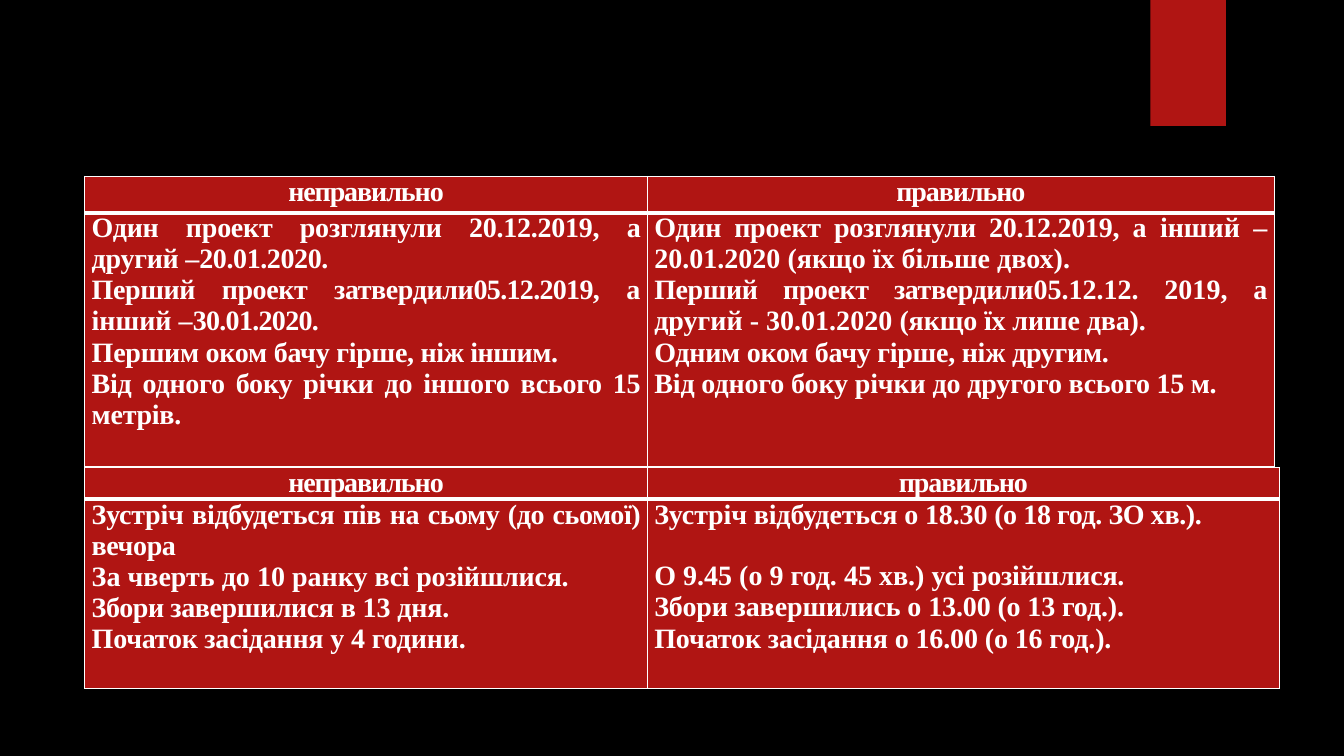
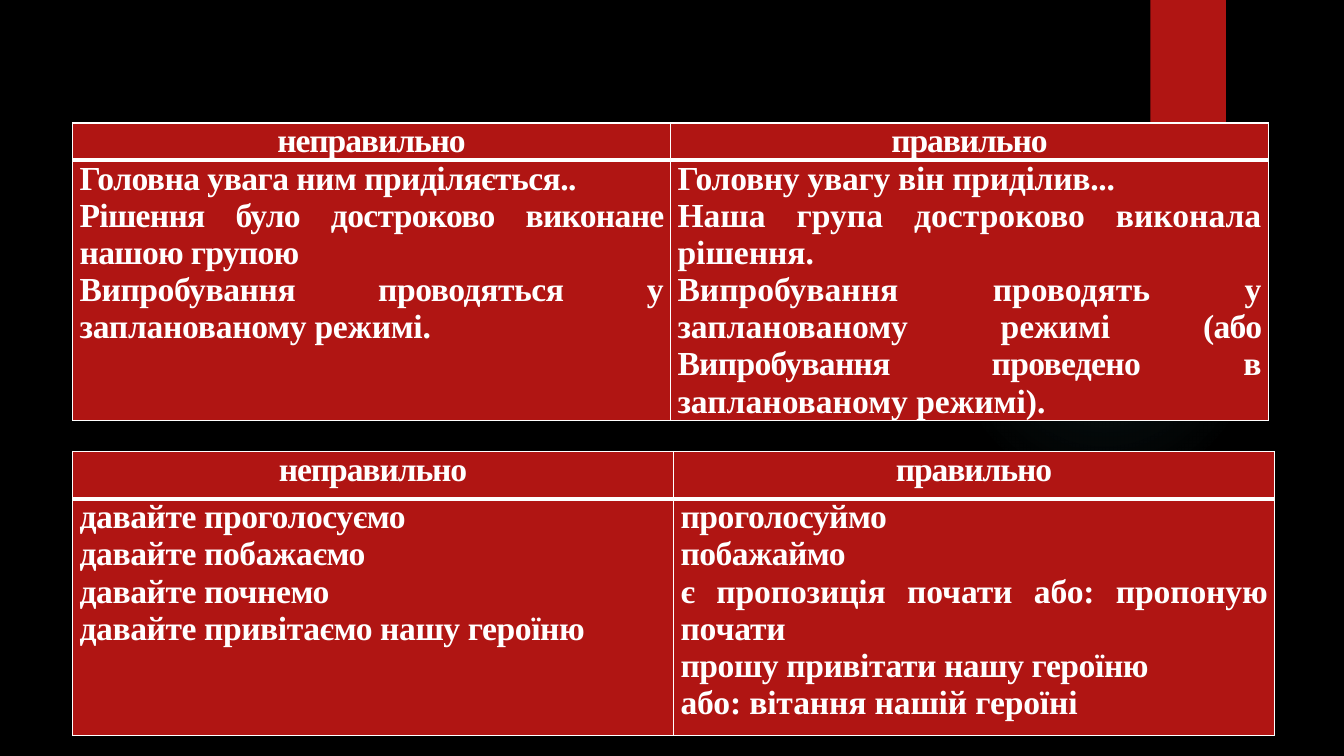
from dataclasses import dataclass

from lxml.etree import SubElement
from pptx import Presentation
from pptx.dml.color import RGBColor
from pptx.enum.shapes import MSO_SHAPE
from pptx.enum.text import PP_ALIGN
from pptx.oxml import parse_xml
from pptx.oxml.ns import nsdecls, qn
from pptx.util import Inches, Pt


@dataclass(frozen=True)
class Theme:
    background: str = "000000"
    red: str = "B01513"
    white: str = "FFFFFF"
    glow: str = "50B9C1"
    font: str = "Times New Roman"
    small: int = 20
    large: int = 24
    heading_spacing: float = -0.8
    thin: int = 1
    thick: int = 3


@dataclass(frozen=True)
class Line:
    runs: tuple
    before: int = 0


THEME = Theme()
HEADINGS = ("неправильно", "правильно")
GLOW_STOPS = ((0, 7), (36, 6), (69, 0))


def line(*runs, before=0):
    return Line(runs, before)


def add_glow(slide, left, top, size):
    shape = slide.shapes.add_shape(
        MSO_SHAPE.OVAL, Inches(left), Inches(top), Inches(size), Inches(size))
    shape.shadow.inherit = False
    shape.line.fill.background()
    stops = "".join(
        f'<a:gs pos="{position * 1000}"><a:srgbClr val="{THEME.glow}">'
        f'<a:alpha val="{opacity * 1000}"/></a:srgbClr></a:gs>'
        for position, opacity in GLOW_STOPS)
    gradient = parse_xml(
        f'<a:gradFill {nsdecls("a")}><a:gsLst>{stops}</a:gsLst><a:path path="circle">'
        '<a:fillToRect l="50000" t="50000" r="50000" b="50000"/></a:path></a:gradFill>')
    shape.element.spPr.find(qn("a:prstGeom")).addnext(gradient)


def add_ribbon(slide, left, top, width, height):
    shape = slide.shapes.add_shape(
        MSO_SHAPE.RECTANGLE, Inches(left), Inches(top), Inches(width), Inches(height))
    shape.shadow.inherit = False
    shape.fill.solid()
    shape.fill.fore_color.rgb = RGBColor.from_string(THEME.red)
    shape.line.fill.background()


def add_base_slide(presentation):
    slide = presentation.slides.add_slide(presentation.slide_layouts[6])
    slide.background.fill.solid()
    slide.background.fill.fore_color.rgb = RGBColor.from_string(THEME.background)
    add_glow(slide, 9.41, 1.83, 3.08)
    add_ribbon(slide, 11.41, 0, 0.75, 1.25)
    return slide


def style_cell(cell, is_heading):
    margins = {"margin_left": 0.07, "margin_right": 0.07, "margin_top": 0, "margin_bottom": 0}
    for name, value in margins.items():
        setattr(cell, name, Inches(value))
    top, bottom = (THEME.thin, THEME.thick) if is_heading else (THEME.thick, THEME.thin)
    borders = {"lnL": THEME.thin, "lnR": THEME.thin, "lnT": top, "lnB": bottom}
    properties = cell._tc.get_or_add_tcPr()
    for side, width in borders.items():
        border = SubElement(properties, qn(f"a:{side}"), w=str(Pt(width)))
        fill = SubElement(border, qn("a:solidFill"))
        SubElement(fill, qn("a:srgbClr"), val=THEME.white)
    cell.fill.solid()
    cell.fill.fore_color.rgb = RGBColor.from_string(THEME.red)


def write_lines(text_frame, lines, size, alignment):
    font_format = {"name": THEME.font, "size": Pt(size), "bold": True}
    for index, content in enumerate(lines):
        paragraph = text_frame.add_paragraph() if index else text_frame.paragraphs[0]
        paragraph.alignment = alignment
        if content.before:
            paragraph.space_before = Pt(content.before)
        for text, spacing in content.runs:
            run = paragraph.add_run()
            run.text = text
            for name, value in font_format.items():
                setattr(run.font, name, value)
            run.font.color.rgb = RGBColor.from_string(THEME.white)
            run._r.get_or_add_rPr().set("spc", str(round(spacing * 100)))


def add_comparison(slide, left, top, widths, heights, size, wrong, right):
    table = slide.shapes.add_table(
        2, 2, Inches(left), Inches(top), Inches(sum(widths)), Inches(sum(heights))).table
    table.first_row = False
    table.horz_banding = False
    for column, width in zip(table.columns, widths):
        column.width = Inches(width)
    for row, height in zip(table.rows, heights):
        row.height = Inches(height)
    for index, (heading, lines) in enumerate(zip(HEADINGS, (wrong, right))):
        heading_line = line((heading, THEME.heading_spacing))
        heading_cell, body_cell = table.cell(0, index), table.cell(1, index)
        style_cell(heading_cell, True)
        style_cell(body_cell, False)
        write_lines(heading_cell.text_frame, [heading_line], size, PP_ALIGN.CENTER)
        write_lines(body_cell.text_frame, lines, size, PP_ALIGN.JUSTIFY)


def build_numbers_slide(presentation):
    slide = add_base_slide(presentation)
    add_comparison(
        slide, 0.84, 1.75, (5.58, 6.22), (0.36, 2.52), THEME.small,
        wrong=[
            line(("Один проект розглянули 20.12.2019, а другий –", -0.2), ("20.01.2020.", -0.3)),
            line(("Перший проект затвердили", -0.3), ("05.12.2019, ", -0.5),
                 ("а інший –", 0), ("30.01.2020.", -0.5)),
            line(("Першим оком бачу гірше,", -0.2), (" ніж іншим.", -0.3)),
            line(("Від одного боку річки до іншого всього 15 метрів.", -0.2)),
        ],
        right=[
            line(("Один проект розглянули 20.12.2019, ", -0.2),
                 ("а інший – 20.01.2020 (якщо їх більше двох).", 0)),
            line(("Перший проект затвердили", -0.3),
                 ("05.12.12. 2019, а другий - 30.01.2020 ", 0), ("(якщо їх лише два).", -0.1)),
            line(("Одним оком бачу гірше, ніж другим.", -0.2)),
            line(("Від одного боку річки до другого", -0.1), (" всього 15 м.", -0.2)),
        ])
    add_comparison(
        slide, 0.84, 4.64, (5.58, 6.27), (0.31, 1.88), THEME.small,
        wrong=[
            line(("Зустріч відбудеться пів", -0.2), (" на сьому (до сьомої) вечора", -0.3)),
            line(("За чверть до 10 ранку", 0), (" всі розійшлися.", -0.2)),
            line(("Збори завершилися", -0.3), (" в 13 дня.", -0.1)),
            line(("Початок засідання", -0.2), (" у 4 години.", -0.1)),
        ],
        right=[
            line(("Зустріч відбудеться о 18.30 ", -0.1), ("(о 18 год. ЗО хв.).", -0.3)),
            line(("О 9.45 (о 9 год. 45 хв.) усі", 0), (" розійшлися.", -0.2), before=22),
            line(("Збори завершились о 13.00 (о 13 год.).", -0.1)),
            line(("Початок засідання о 16.00 (о 16 год.).", -0.1)),
        ])


def build_verbs_slide(presentation):
    slide = add_base_slide(presentation)
    add_comparison(
        slide, 0.72, 1.22, (5.93, 5.93), (0.37, 2.58), THEME.large,
        wrong=[
            line(("Головна увага ним приділяється..", -0.4)),
            line(("Рішення було достроково виконане нашою групою", -0.5)),
            line(("Випробування проводяться", -0.3), (" у запланованому режимі.", -0.2)),
        ],
        right=[
            line(("Головну увагу він приділив...", -0.2)),
            line(("Наша група достроково виконала рішення.", 0)),
            line(("Випробування проводять у запланованому режимі ", 0),
                 ("(або Випробування проведено", -0.5), (" в запланованому режимі).", 0)),
        ])
    add_comparison(
        slide, 0.72, 4.48, (5.96, 5.96), (0.47, 2.35), THEME.large,
        wrong=[
            line(("давайте проголосуємо", -0.3)),
            line(("давайте побажаємо", -0.3)),
            line(("давайте почнемо", -0.3)),
            line(("давайте привітаємо нашу героїню", -0.3)),
        ],
        right=[
            line(("проголосуймо", -0.3)),
            line(("побажаймо", -0.4)),
            line(("є пропозиція почати або: пропоную почати", -0.1)),
            line(("прошу привітати нашу героїню", -0.3)),
            line(("або: вітання нашій героїні", -0.1)),
        ])


def main():
    presentation = Presentation()
    presentation.slide_width = Inches(13.33)
    presentation.slide_height = Inches(7.5)
    build_numbers_slide(presentation)
    build_verbs_slide(presentation)
    presentation.save("out.pptx")


if __name__ == "__main__":
    main()
